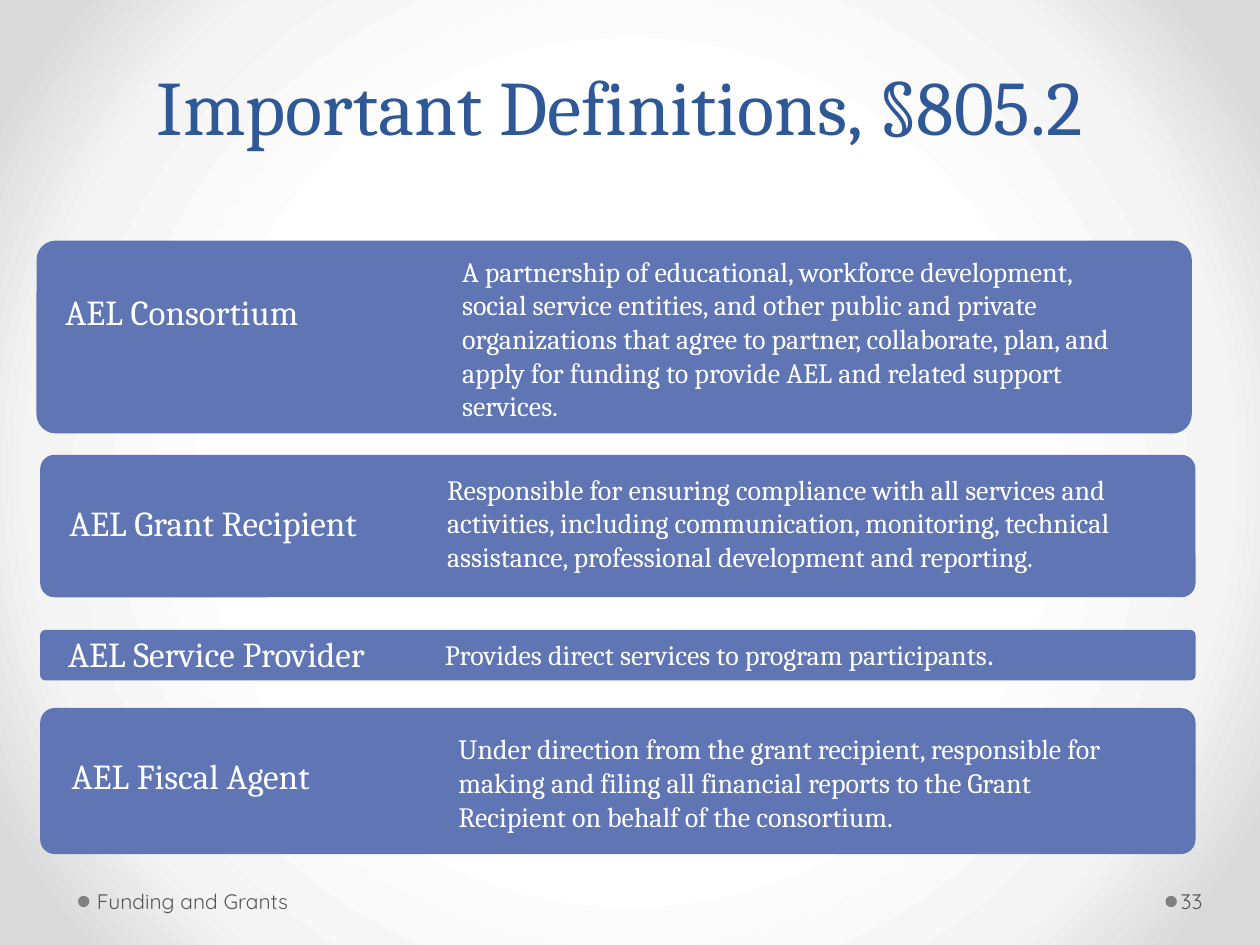
from dataclasses import dataclass
from typing import Any, NamedTuple

from pptx import Presentation
from pptx import oxml
from pptx import util as u
from pptx.dml.color import RGBColor
from pptx.enum import shapes, text
from pptx.oxml.ns import nsdecls

TITLE_BLUE = RGBColor(0x2F, 0x58, 0x97)
CARD_BLUE = RGBColor(0x60, 0x76, 0xB4)
WHITE = RGBColor(0xFF, 0xFF, 0xFF)
FOOTER_GREY = RGBColor(0x59, 0x59, 0x59)
DOT_GREY = RGBColor(0x80, 0x80, 0x80)
BACKGROUND_STOPS = ((50, "FFFFFF"), (76, "F4F4F4"), (92, "DADADA"))

BODY_FONT = "Cambria"
FOOTER_FONT = "Quicksand"
CARD_WIDTH = 660.2
DEFAULT_INSETS = (7.2, 3.6, 7.2, 3.6)


class Box(NamedTuple):
    left: float
    top: float
    width: float
    height: float

    def lengths(self) -> list[u.Length]:
        return [u.Pt(value) for value in self]


class Run(NamedTuple):
    wording: str
    size: float
    color: RGBColor = WHITE
    font: str = BODY_FONT


@dataclass
class Definition:
    term: str
    card: Box
    term_box: Box
    term_inset: float
    meaning_box: Box
    meaning: tuple[Run, ...]
    meaning_frame: dict[str, Any]
    meaning_insets: tuple[float, ...] = DEFAULT_INSETS


GROWING = {"auto_size": text.MSO_AUTO_SIZE.SHAPE_TO_FIT_TEXT}
MIDDLE = {"vertical_anchor": text.MSO_ANCHOR.MIDDLE}
BOTTOM = {"vertical_anchor": text.MSO_ANCHOR.BOTTOM}

DEFINITIONS = (
    Definition(
        "AEL Consortium",
        Box(20.9, 137.5, CARD_WIDTH, 110.2),
        Box(32.4, 141.1, 634.3, 77), 5,
        Box(257, 141.8, 394.6, 104.4),
        (Run("A partnership of educational, workforce development, social service "
             "entities, and other public and private organizations that agree to "
             "partner, collaborate, plan, and apply for funding to provide AEL and "
             "related support services.", 16),),
        GROWING,
    ),
    Definition(
        "AEL Grant Recipient",
        Box(23, 259.9, CARD_WIDTH, 81.4),
        Box(33.8, 262.1, 639.4, 76.3), 5.8,
        Box(248.4, 266.4, 431.3, 67.7),
        (Run("Responsible for ensuring compliance with all services and activities, "
             "including communication, monitoring, technical assistance, professional "
             "development and reporting.", 16),),
        GROWING,
    ),
    Definition(
        "AEL Service Provider",
        Box(23, 360, CARD_WIDTH, 28.8),
        Box(33.1, 361.4, 639.4, 27.4), 5.8,
        Box(254.2, 362.2, 387.4, 21.6),
        (Run("Provides direct services to program participants", 16), Run(".", 18)),
        GROWING | MIDDLE,
        (0, 0, 0, 0),
    ),
    Definition(
        "AEL Fiscal Agent",
        Box(23, 404.6, CARD_WIDTH, 83.5),
        Box(36, 408.2, 634.3, 73.4), 5,
        Box(254.9, 414.7, 399.6, 65.5),
        (Run("Under direction from the grant recipient, responsible for making and "
             "filing all financial reports to the Grant Recipient on behalf of the "
             "consortium.", 16),),
        GROWING,
    ),
)


def set_values(target: Any, values: dict[str, Any]) -> None:
    for name, value in values.items():
        setattr(target, name, value)


def paint_background(slide: Any) -> None:
    """Fill the background with a radial gradient from the slide's centre."""
    stops = "".join(
        f'<a:gs pos="{position * 1000}"><a:srgbClr val="{color}"/></a:gs>'
        for position, color in BACKGROUND_STOPS
    )
    background = oxml.parse_xml(
        f'<p:bg {nsdecls("p", "a")}><p:bgPr><a:gradFill rotWithShape="1">'
        f'<a:gsLst>{stops}</a:gsLst><a:path path="circle">'
        '<a:fillToRect l="50000" t="50000" r="50000" b="50000"/></a:path>'
        '</a:gradFill><a:effectLst/></p:bgPr></p:bg>'
    )
    slide.element.cSld.insert(0, background)


def add_filled_shape(parent: Any, kind: Any, box: Box, color: RGBColor) -> Any:
    shape = parent.shapes.add_shape(kind, *box.lengths())
    shape.shadow.inherit = False
    shape.fill.solid()
    shape.fill.fore_color.rgb = color
    shape.line.fill.background()
    return shape


def add_text(parent: Any, box: Box, runs: tuple[Run, ...], frame_format: dict[str, Any],
             insets: tuple[float, ...] = DEFAULT_INSETS,
             paragraph_format: dict[str, Any] | None = None) -> None:
    frame = parent.shapes.add_textbox(*box.lengths()).text_frame
    sides = ("margin_left", "margin_top", "margin_right", "margin_bottom")
    margins = {side: u.Pt(inset) for side, inset in zip(sides, insets)}
    set_values(frame, {"word_wrap": True} | margins | frame_format)
    paragraph = frame.paragraphs[0]
    set_values(paragraph, paragraph_format or {})
    for wording, size, color, font in runs:
        run = paragraph.add_run()
        run.text = wording
        set_values(run.font, {"name": font, "size": u.Pt(size)})
        run.font.color.rgb = color


def add_definition(slide: Any, definition: Definition) -> None:
    group = slide.shapes.add_group_shape()
    card = add_filled_shape(group, shapes.MSO_SHAPE.ROUNDED_RECTANGLE,
                            definition.card, CARD_BLUE)
    card.adjustments[0] = 0.1
    add_text(group, definition.term_box, (Run(definition.term, 20),), MIDDLE,
             (definition.term_inset,) * 4, {"line_spacing": 0.9})
    add_text(group, definition.meaning_box, definition.meaning,
             definition.meaning_frame, definition.meaning_insets)


def add_footer_item(slide: Any, dot_left: float, box: Box, wording: str,
                    insets: tuple[float, ...]) -> None:
    add_filled_shape(slide, shapes.MSO_SHAPE.OVAL, Box(dot_left, 511.9, 6.5, 6.5), DOT_GREY)
    add_text(slide, box, (Run(wording, 12, FOOTER_GREY, FOOTER_FONT),), MIDDLE, insets)


def main() -> None:
    presentation = Presentation()
    presentation.slide_width, presentation.slide_height = u.Pt(720), u.Pt(540)
    slide = presentation.slides.add_slide(presentation.slide_layouts[6])
    paint_background(slide)
    add_footer_item(slide, 44.6, Box(51.8, 500.4, 223.9, 28.8), "Funding and Grants",
                    (3.6, 3.6, 7.2, 3.6))
    add_footer_item(slide, 666, Box(672.5, 500.4, 43.9, 28.8), "33", (2.2, 3.6, 3.6, 3.6))
    for definition in DEFINITIONS:
        add_definition(slide, definition)
    add_text(slide, Box(35.3, 0.7, 648, 89.3),
             (Run("Important Definitions, §805.2 ", 44, TITLE_BLUE),), BOTTOM,
             paragraph_format={"alignment": text.PP_ALIGN.CENTER, "line_spacing": u.Pt(58)})
    presentation.save("out.pptx")


if __name__ == "__main__":
    main()
